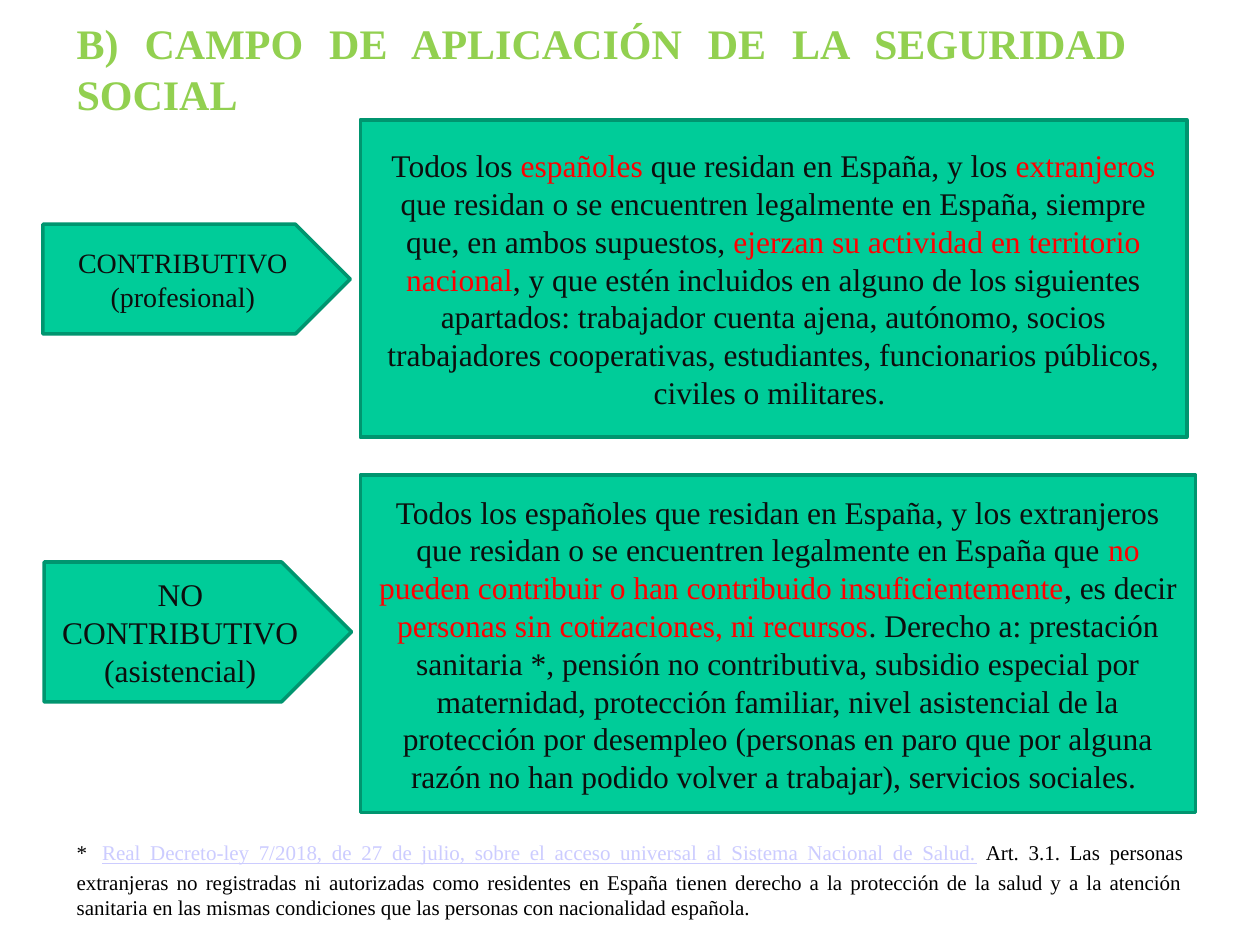
from pptx import Presentation
from pptx import util as u
from pptx.dml.color import RGBColor
from pptx.enum import shapes, text

GREEN = RGBColor(0x00, 0xCC, 0x99)
EDGE = RGBColor(0x00, 0x95, 0x6F)
LIME = RGBColor(0x92, 0xD0, 0x50)
INK = RGBColor(0x0D, 0x0D, 0x0D)
RED = RGBColor(0xFF, 0x00, 0x00)
LILAC = RGBColor(0xCC, 0xCC, 0xFF)
BLACK = RGBColor(0x00, 0x00, 0x00)
WHITE = RGBColor(0xFF, 0xFF, 0xFF)

CENTER, JUSTIFY = text.PP_ALIGN.CENTER, text.PP_ALIGN.JUSTIFY
TOP, MIDDLE = text.MSO_ANCHOR.TOP, text.MSO_ANCHOR.MIDDLE
RECT, ARROW = shapes.MSO_SHAPE.RECTANGLE, shapes.MSO_SHAPE.PENTAGON


class Deck:
    """Style and current slide; positions are percentages of the slide."""
    font = "Times New Roman"

    def __init__(self):
        self.prs = Presentation()
        self.prs.slide_width, self.prs.slide_height = u.Inches(10), u.Inches(7.5)
        self.s = self.prs.slides.add_slide(self.prs.slide_layouts[6])

    def place(self, x, y, w, h):
        sw, sh = self.prs.slide_width, self.prs.slide_height
        return [int(v * side / 100) for v, side in ((x, sw), (y, sh), (w, sw), (h, sh))]

    def run(self, p, words, size, color, bold=False, underline=False):
        r = p.add_run()
        r.text = words
        f = r.font
        f.name, f.size, f.bold, f.underline = self.font, u.Pt(size), bold, underline
        f.color.rgb = color

    def shape(self, kind, at, fill, line, anchor=MIDDLE):
        sp = self.s.shapes.add_shape(kind, *self.place(*at))
        sp.shadow.inherit = False
        sp.fill.solid()
        sp.fill.fore_color.rgb = fill
        sp.line.color.rgb = line
        sp.line.width = u.Pt(2)
        tf = sp.text_frame
        tf.word_wrap, tf.vertical_anchor = True, anchor
        return tf

    def title(self, at, words):
        tf = self.shape(RECT, at, WHITE, WHITE, TOP)
        tf.margin_top = u.Inches(0.01)
        p = tf.paragraphs[0]
        p.alignment = JUSTIFY
        self.run(p, words, 24, LIME, bold=True)

    def arrow(self, at, lines, size):
        tf = self.shape(ARROW, at, GREEN, EDGE)
        tf.text = "\n".join(lines)
        for p in tf.paragraphs:
            p.alignment = CENTER
            f = p.runs[0].font
            f.name, f.size = self.font, u.Pt(size)
            f.color.rgb = INK

    def panel(self, at, parts):
        """Plain and highlighted parts alternate, starting with plain."""
        p = self.shape(RECT, at, GREEN, EDGE).paragraphs[0]
        p.alignment = CENTER
        for i, words in enumerate(parts):
            self.run(p, words, 18, RED if i % 2 else INK)

    def note(self, at, runs):
        tf = self.s.shapes.add_textbox(*self.place(*at)).text_frame
        tf.word_wrap = True
        tf.auto_size = text.MSO_AUTO_SIZE.SHAPE_TO_FIT_TEXT
        p = tf.paragraphs[0]
        p.alignment = JUSTIFY
        for words, size, color, underline in runs:
            self.run(p, words, size, color, underline=underline)


def main():
    d = Deck()
    d.title((5.1, 1.73, 85.3, 20.93), "B) CAMPO DE APLICACIÓN DE LA SEGURIDAD SOCIAL")

    # Contributory level
    d.arrow((3.4, 23.73, 24.4, 11.6), ["CONTRIBUTIVO", "(profesional)"], 16)
    d.panel((28.6, 12.67, 65.6, 33.6), [
        "Todos los ", "españoles", " que residan en España, y los ", "extranjeros",
        " que residan o se encuentren legalmente en España, siempre que, "
        "en ambos supuestos, ",
        "ejerzan su actividad en territorio nacional",
        ", y que estén incluidos en alguno de los siguientes apartados: "
        "trabajador cuenta ajena, autónomo, socios trabajadores cooperativas, "
        "estudiantes, funcionarios públicos, civiles o militares. "])

    # Non-contributory level
    d.arrow((3.5, 59.47, 24.4, 14.8), ["NO CONTRIBUTIVO", "(asistencial)"], 18)
    d.panel((28.6, 50.27, 66.3, 35.73), [
        "Todos los españoles que residan en España, y los extranjeros que residan "
        "o se encuentren legalmente en España que ",
        "no pueden contribuir o han contribuido insuficientemente", ", es decir ",
        "personas sin cotizaciones, ni recursos",
        ". Derecho a: prestación sanitaria *, pensión no contributiva, subsidio "
        "especial por maternidad, protección familiar, nivel asistencial de la "
        "protección por desempleo (personas en paro que por alguna razón no han "
        "podido volver a trabajar), servicios sociales. "])

    # Footnote
    d.note((5.1, 86, 89.8, 12.13), [
        ("*", 12, BLACK, False),
        (" ", 24, BLACK, False),
        ("Real Decreto-ley 7/2018, de 27 de julio, sobre el acceso universal al "
         "Sistema Nacional de Salud.", 12, LILAC, True),
        (" Art. 3.1. Las personas extranjeras no registradas ni autorizadas como "
         "residentes en España tienen derecho a la protección de la salud y a la "
         "atención sanitaria en las mismas condiciones que las personas con "
         "nacionalidad española. ", 12, BLACK, False)])
    d.prs.save("out.pptx")


if __name__ == "__main__":
    main()
